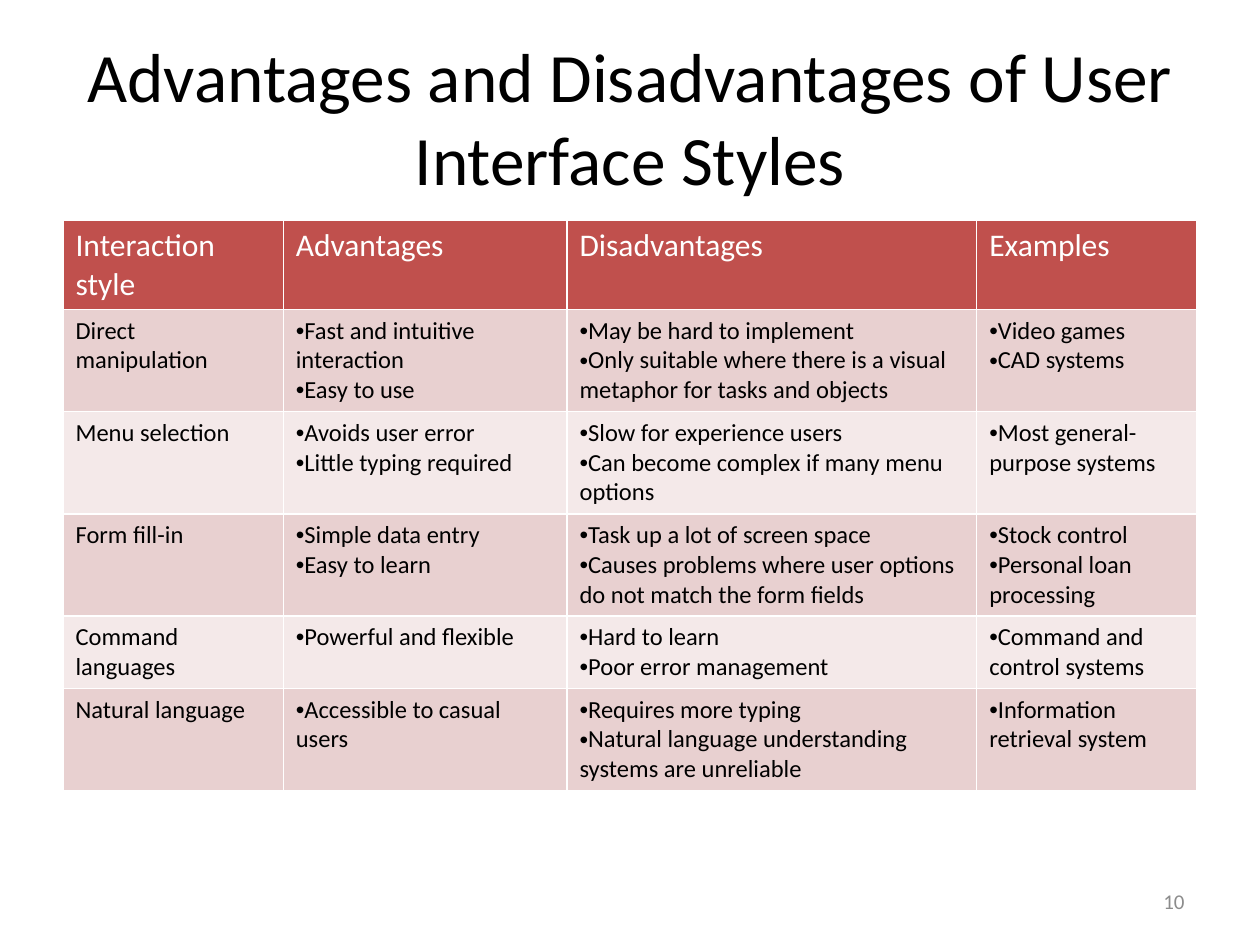
from dataclasses import dataclass

from lxml.etree import SubElement
from pptx import Presentation
from pptx.dml.color import RGBColor
from pptx.enum.text import MSO_ANCHOR, PP_ALIGN
from pptx.oxml.ns import qn
from pptx.util import Cm, Pt


@dataclass(frozen=True)
class Theme:
    font: str = "Calibri"
    bullet_font: str = "Arial"
    ink: str = "000000"
    header_ink: str = "FFFFFF"
    number_ink: str = "8C8C8C"
    header_fill: str = "C0504D"
    bands: tuple[str, str] = ("E8D0D0", "F4E9E9")
    rule: str = "FFFFFF"
    rule_width: float = 1
    title_size: float = 39.6
    header_size: float = 18
    body_size: float = 14
    number_size: float = 12


@dataclass(frozen=True)
class Style:
    name: str
    advantages: tuple[str, ...]
    disadvantages: tuple[str, ...]
    examples: tuple[str, ...]


@dataclass(frozen=True)
class Caption:
    text: str
    box: tuple[float, float, float, float]
    size: float
    ink: str
    align: PP_ALIGN


THEME = Theme()
CAPTIONS = (
    Caption("Advantages and Disadvantages of User Interface Styles",
            (1.27, 0.76, 22.86, 3.18), THEME.title_size, THEME.ink, PP_ALIGN.CENTER),
    Caption("10", (18.21, 17.65, 5.92, 1.02), THEME.number_size, THEME.number_ink,
            PP_ALIGN.RIGHT),
)
HEADINGS = ("Interaction style", "Advantages", "Disadvantages", "Examples")
COLUMN_WIDTHS = (4.44, 5.72, 8.26, 4.44)
ROW_HEIGHTS = (1.8, 2.06, 2.06, 2.06, 1.46, 2.06)
STYLES = (
    Style("Direct manipulation",
          ("Fast and intuitive interaction", "Easy to use"),
          ("May be hard to implement",
           "Only suitable where there is a visual metaphor for tasks and objects"),
          ("Video games", "CAD systems")),
    Style("Menu selection",
          ("Avoids user error", "Little typing required"),
          ("Slow for experience users", "Can become complex if many menu options"),
          ("Most general-purpose systems",)),
    Style("Form fill-in",
          ("Simple data entry", "Easy to learn"),
          ("Task up a lot of screen space",
           "Causes problems where user options do not match the form fields"),
          ("Stock control", "Personal loan processing")),
    Style("Command languages",
          ("Powerful and flexible",),
          ("Hard to learn", "Poor error management"),
          ("Command and control systems",)),
    Style("Natural language",
          ("Accessible to casual users",),
          ("Requires more typing",
           "Natural language understanding systems are unreliable"),
          ("Information retrieval system",)),
)


def add_run(paragraph, text: str, size: float, ink: str) -> None:
    run = paragraph.add_run()
    run.text = text
    run.font.name = THEME.font
    run.font.size = Pt(size)
    run.font.color.rgb = RGBColor.from_string(ink)


def add_caption(slide, caption: Caption) -> None:
    frame = slide.shapes.add_textbox(*map(Cm, caption.box)).text_frame
    frame.word_wrap = True
    frame.vertical_anchor = MSO_ANCHOR.MIDDLE
    paragraph = frame.paragraphs[0]
    paragraph.alignment = caption.align
    add_run(paragraph, caption.text, caption.size, caption.ink)


def add_borders(cell) -> None:
    properties = cell._tc.get_or_add_tcPr()
    for side in ("lnL", "lnR", "lnT", "lnB"):
        line = SubElement(properties, qn(f"a:{side}"), w=str(Pt(THEME.rule_width)))
        fill = SubElement(line, qn("a:solidFill"))
        SubElement(fill, qn("a:srgbClr"), val=THEME.rule)


def add_bullet(paragraph) -> None:
    properties = paragraph._p.get_or_add_pPr()
    SubElement(properties, qn("a:buFont"), typeface=THEME.bullet_font)
    SubElement(properties, qn("a:buChar"), char="•")


def fill_cell(cell, lines: tuple[str, ...], size: float, ink: str, fill: str,
              bulleted: bool = False) -> None:
    add_borders(cell)
    cell.fill.solid()
    cell.fill.fore_color.rgb = RGBColor.from_string(fill)
    frame = cell.text_frame
    for index, line in enumerate(lines):
        paragraph = frame.add_paragraph() if index else frame.paragraphs[0]
        paragraph.line_spacing = 1.0
        if bulleted:
            add_bullet(paragraph)
        add_run(paragraph, line, size, ink)


def add_style_table(slide) -> None:
    table = slide.shapes.add_table(
        len(ROW_HEIGHTS), len(HEADINGS), Cm(1.27), Cm(4.44),
        Cm(sum(COLUMN_WIDTHS)), Cm(sum(ROW_HEIGHTS))).table
    for column, width in zip(table.columns, COLUMN_WIDTHS):
        column.width = Cm(width)
    for row, height in zip(table.rows, ROW_HEIGHTS):
        row.height = Cm(height)
    for cell, heading in zip(table.rows[0].cells, HEADINGS):
        fill_cell(cell, (heading,), THEME.header_size, THEME.header_ink,
                  THEME.header_fill)
    for index, style in enumerate(STYLES):
        band = THEME.bands[index % 2]
        name_cell, *point_cells = table.rows[index + 1].cells
        fill_cell(name_cell, (style.name,), THEME.body_size, THEME.ink, band)
        points = (style.advantages, style.disadvantages, style.examples)
        for cell, lines in zip(point_cells, points):
            fill_cell(cell, lines, THEME.body_size, THEME.ink, band, bulleted=True)


def main() -> None:
    presentation = Presentation()
    presentation.slide_width = Cm(25.4)
    presentation.slide_height = Cm(19.05)
    slide = presentation.slides.add_slide(presentation.slide_layouts[6])
    for caption in CAPTIONS:
        add_caption(slide, caption)
    add_style_table(slide)
    presentation.save("out.pptx")


if __name__ == "__main__":
    main()
